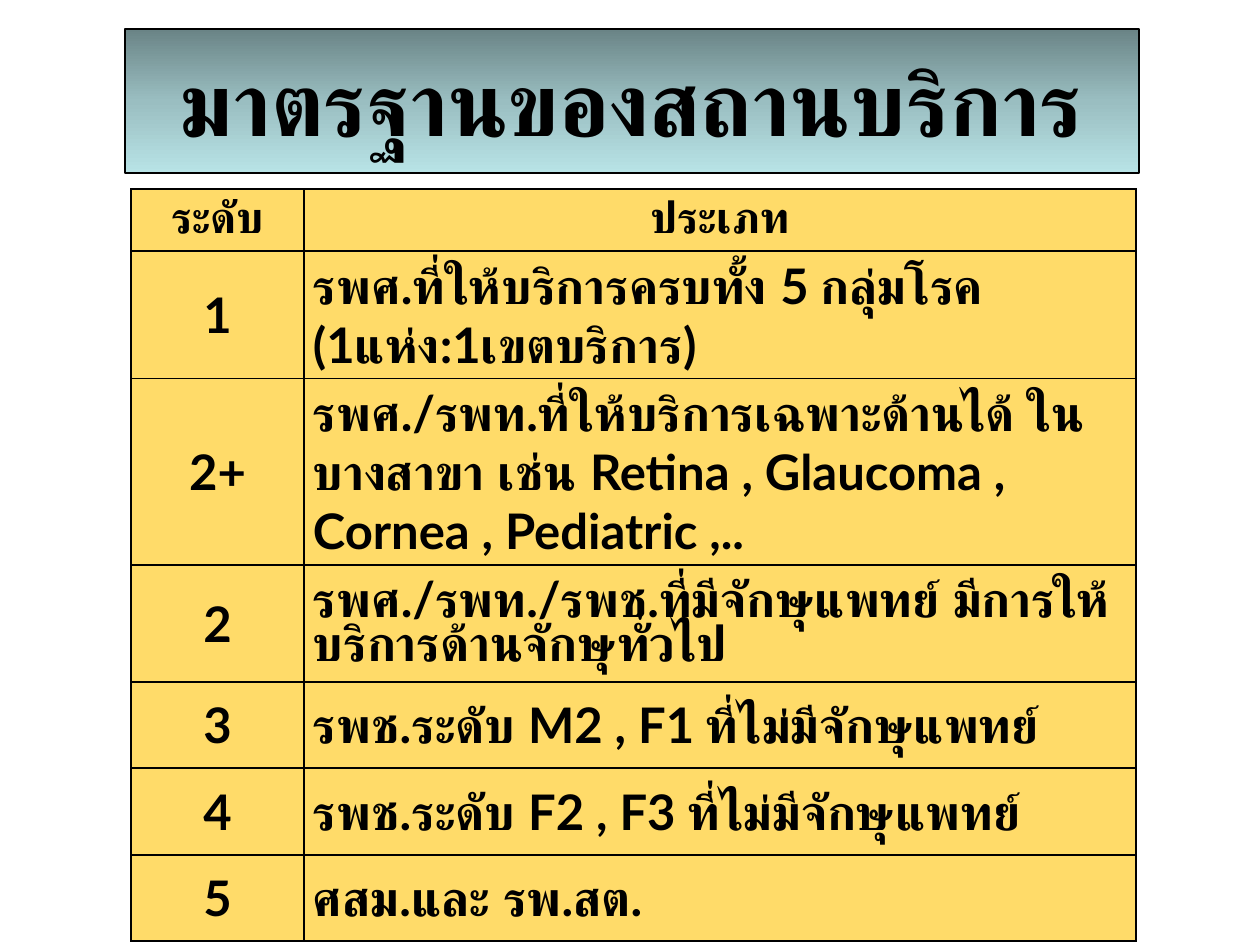
from lxml import etree
from pptx import Presentation, util as u
from pptx.dml.color import RGBColor
from pptx.enum import shapes, text
from pptx.oxml.ns import qn

PX = 914400 // 126
MID = text.MSO_ANCHOR.MIDDLE
CENTER, LEFT = text.PP_ALIGN.CENTER, text.PP_ALIGN.LEFT


def paint(fmt, color):
    fmt.solid()
    fmt.fore_color.rgb = RGBColor.from_string(color)


def write(frame, words, align, size, font):
    para = frame.paragraphs[0]
    para.alignment = align
    run = para.add_run()
    run.text = words
    for key, val in {"size": u.Pt(size), "name": font, "bold": True}.items():
        setattr(run.font, key, val)
    paint(run.font.fill, "000000")
    return para


deck = Presentation()
deck.slide_width, deck.slide_height = 1260 * PX, 945 * PX
slide = deck.slides.add_slide(deck.slide_layouts[6])

# Title band with a vertical gradient
band = slide.shapes.add_shape(
    shapes.MSO_SHAPE.RECTANGLE, 125 * PX, 29 * PX, 1014 * PX, 144 * PX)
band.shadow.inherit = False
paint(band.line.fill, "000000")
band.line.width = u.Pt(0.75)
band.fill.gradient()
band.fill.gradient_angle = 270
stops = band.fill._fill._gradFill.find(qn("a:gsLst"))
for stop in list(stops):
    stops.remove(stop)
for pos, color in ((0, "6A8486"), (50, "9ABEC1"), (100, "B8E3E6")):
    stop = etree.SubElement(stops, qn("a:gs"), pos=str(pos * 1000))
    etree.SubElement(stop, qn("a:srgbClr"), val=color)
band.text_frame.word_wrap = True
band.text_frame.vertical_anchor = MID
write(band.text_frame, "มาตรฐานของสถานบริการ", CENTER, 51, "Calibri")

# Service levels: level, type, row height
rows = [
    ("ระดับ", "ประเภท", 62),
    ("1", "รพศ.ที่ให้บริการครบทั้ง 5 กลุ่มโรค (1แห่ง:1เขตบริการ)", 126),
    ("2+", "รพศ./รพท.ที่ให้บริการเฉพาะด้านได้ ในบางสาขา เช่น "
           "Retina , Glaucoma , Cornea , Pediatric ,..", 186),
    ("2", "รพศ./รพท./รพช.ที่มีจักษุแพทย์ มีการให้บริการด้านจักษุทั่วไป", 117),
    ("3", "รพช.ระดับ M2 , F1 ที่ไม่มีจักษุแพทย์", 86),
    ("4", "รพช.ระดับ F2 , F3 ที่ไม่มีจักษุแพทย์", 87),
    ("5", "ศสม.และ รพ.สต.", 86),
]
table = slide.shapes.add_table(
    len(rows), 2, 131 * PX, 189 * PX, 1005 * PX,
    sum(row[2] for row in rows) * PX).table
for col, wide in zip(table.columns, (173, 832)):
    col.width = wide * PX

look = {"vertical_anchor": MID, "margin_left": 9 * PX, "margin_right": 9 * PX,
        "margin_top": 5 * PX, "margin_bottom": 5 * PX}
for r, (*words, high) in enumerate(rows):
    table.rows[r].height = high * PX
    for c, word in enumerate(words):
        cell = table.cell(r, c)
        for key, val in look.items():
            setattr(cell, key, val)
        para = write(cell.text_frame, word, LEFT if r and c else CENTER,
                     28 if r else 25, "Lato")
        if c and words[0] == "2":
            para.line_spacing = 0.85

        # Borders come before the fill in the cell properties
        props = cell._tc.get_or_add_tcPr()
        for side in ("lnL", "lnR", "lnT", "lnB"):
            edge = etree.SubElement(props, qn("a:" + side), w=str(u.Pt(1)))
            ink = etree.SubElement(edge, qn("a:solidFill"))
            etree.SubElement(ink, qn("a:srgbClr"), val="000000")
        paint(cell.fill, "FFDB69")

deck.save("out.pptx")
